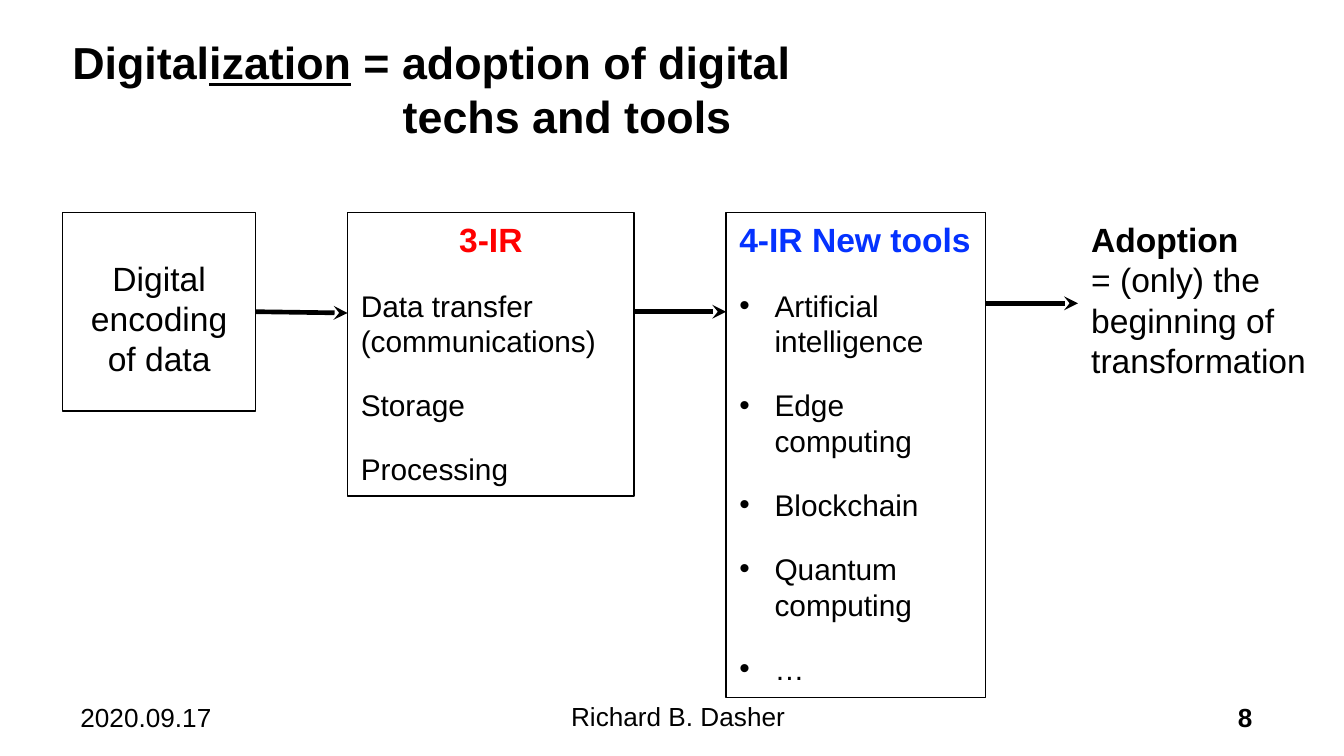
"""Build the slide on digitalization as adoption of digital techs and tools."""
from lxml.etree import SubElement
from pptx import Presentation
from pptx.dml.color import RGBColor
from pptx.enum.shapes import MSO_CONNECTOR, MSO_SHAPE
from pptx.enum.text import MSO_ANCHOR as Anchor, PP_ALIGN as Align
from pptx.oxml.ns import qn
from pptx.util import Pt

BLACK = RGBColor(0x00, 0x00, 0x00)
RED = RGBColor(0xFF, 0x00, 0x00)
BLUE = RGBColor(0x04, 0x32, 0xFF)
FONT = "Arial"
ROW_TOP = 113.75
ARROW_Y = 167


def style(font, size, bold=False, color=BLACK):
    """Set the typeface, size, weight and colour of a font."""
    font.name, font.size, font.bold = FONT, Pt(size), bold
    font.color.rgb = color


def set_indent(paragraph, left, hanging):
    """Give a paragraph a left margin and a hanging first line."""
    properties = paragraph._p.get_or_add_pPr()
    properties.set("marL", str(Pt(left)))
    properties.set("indent", str(-Pt(hanging)))
    return properties


def add_bullet(paragraph):
    """Give a paragraph a round bullet with a hanging indent."""
    properties = set_indent(paragraph, 18.9, 18.9)
    SubElement(properties, qn("a:buFont"), typeface=FONT)
    SubElement(properties, qn("a:buChar"), char="•")


def add_text(slide, left, top, width, height, anchor=Anchor.TOP):
    """Add an empty wrapping text box and return its text frame."""
    box = slide.shapes.add_textbox(Pt(left), Pt(top), Pt(width), Pt(height))
    frame = box.text_frame
    frame.word_wrap = True
    frame.vertical_anchor = anchor
    return frame


def add_title(slide):
    """Add the title, whose second line hangs below the definition."""
    frame = add_text(slide, 31.7, 13.7, 448.6, 67.7, Anchor.MIDDLE)
    paragraph = frame.paragraphs[0]
    set_indent(paragraph, 177, 177)
    style(paragraph.font, 24, bold=True)
    paragraph.add_run().text = "Digital"
    suffix = paragraph.add_run()
    suffix.text = "ization"
    suffix.font.underline = True
    paragraph.add_run().text = " = adoption of digital"
    paragraph.add_line_break()
    paragraph.add_run().text = "techs and tools"


def add_footer(slide, left, top, width, text, align, bold=False):
    """Add one line of footer text."""
    frame = add_text(slide, left, top, width, 27.4, Anchor.BOTTOM)
    paragraph = frame.paragraphs[0]
    paragraph.text = text
    paragraph.alignment = align
    style(paragraph.font, 14, bold)


def add_box(slide, left, width, height):
    """Add an outlined box on the common top line."""
    box = slide.shapes.add_shape(
        MSO_SHAPE.RECTANGLE, Pt(left), Pt(ROW_TOP), Pt(width), Pt(height))
    box.shadow.inherit = False
    box.fill.background()
    box.line.color.rgb = BLACK
    box.line.width = Pt(0.75)
    box.text_frame.word_wrap = True
    box.text_frame.vertical_anchor = Anchor.TOP
    return box


def fill_list(box, heading, color, heading_align, items, bulleted=False):
    """Write a coloured heading and a spaced list into a box."""
    frame = box.text_frame
    title = frame.paragraphs[0]
    title.text = heading
    title.alignment = heading_align
    title.space_after = Pt(6)
    style(title.font, 18, True, color)
    for item in items:
        paragraph = frame.add_paragraph()
        paragraph.text = item
        paragraph.alignment = Align.LEFT
        paragraph.space_before, paragraph.space_after = Pt(9), Pt(6)
        if bulleted:
            add_bullet(paragraph)
        style(paragraph.font, 16)


def add_encoding_box(slide):
    """Add the box for the first step, with its text set one line down."""
    box = add_box(slide, 33.5, 103.5, 106.5)
    box.text_frame.margin_top = Pt(24.3)
    paragraph = box.text_frame.paragraphs[0]
    paragraph.text = "Digital encoding of data"
    paragraph.alignment = Align.CENTER
    style(paragraph.font, 18)
    return box


def add_adoption(slide):
    """Add the closing statement on adoption."""
    frame = add_text(slide, 577.5, ROW_TOP, 134, 94.3)
    heading, statement = frame.paragraphs[0], frame.add_paragraph()
    heading.text = "Adoption"
    statement.text = "= (only) the beginning of transformation"
    style(heading.font, 18, bold=True)
    style(statement.font, 18)


def add_arrow(slide, start_x, start_y, end_x, end_y):
    """Add a black line that ends in a stealth arrowhead."""
    arrow = slide.shapes.add_connector(
        MSO_CONNECTOR.STRAIGHT, Pt(start_x), Pt(start_y), Pt(end_x), Pt(end_y))
    arrow.line.color.rgb = BLACK
    arrow.line.width = Pt(2.5)
    SubElement(arrow.line._get_or_add_ln(), qn("a:tailEnd"), type="stealth")
    SubElement(arrow._element.spPr, qn("a:effectLst"))
    return arrow


def main():
    """Build and save the slide."""
    presentation = Presentation()
    presentation.slide_width, presentation.slide_height = Pt(720), Pt(405)
    slide = presentation.slides.add_slide(presentation.slide_layouts[6])

    add_title(slide)
    add_footer(slide, 36, 368.8, 150, "2020.09.17", Align.LEFT)
    add_footer(slide, 185.8, 368, 355, "Richard B. Dasher", Align.CENTER)
    add_footer(slide, 528, 368.8, 150, "8", Align.RIGHT, bold=True)

    encoding = add_encoding_box(slide)
    third = add_box(slide, 186.2, 153.5, 152)
    fill_list(third, "3-IR", RED, Align.CENTER,
              ["Data transfer (communications)", "Storage", "Processing"])
    fourth = add_box(slide, 389, 139, 260)
    fill_list(fourth, "4-IR New tools", BLUE, Align.LEFT,
              ["Artificial intelligence", "Edge computing", "Blockchain",
               "Quantum computing", "…"], bulleted=True)
    add_adoption(slide)

    add_arrow(slide, 137, ARROW_Y, 186.2, 167.7).begin_connect(encoding, 3)
    add_arrow(slide, 339.7, ARROW_Y, 389, ARROW_Y)
    add_arrow(slide, 528, 162.5, 577.5, 162.5)
    presentation.save("out.pptx")


if __name__ == "__main__":
    main()
